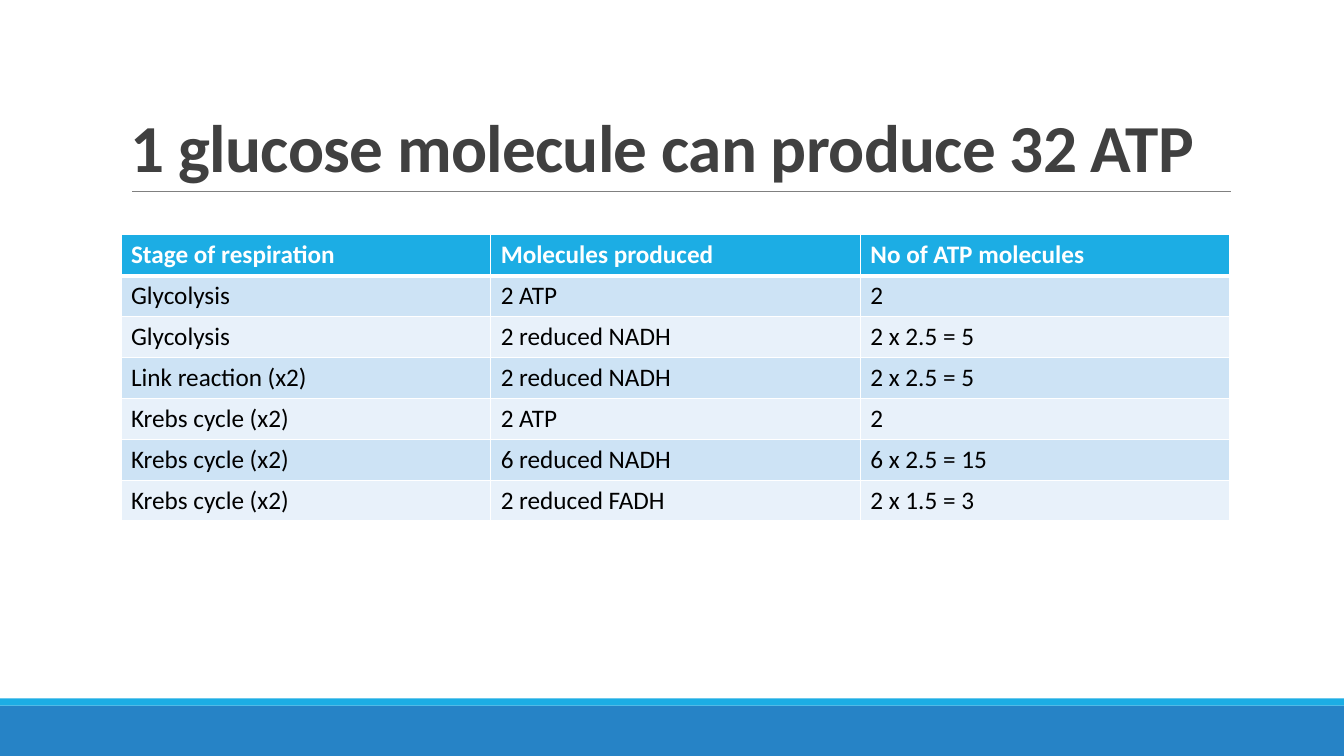
from lxml.etree import SubElement
from pptx import Presentation
from pptx.dml.color import RGBColor
from pptx.enum.shapes import MSO_CONNECTOR, MSO_SHAPE
from pptx.enum.text import MSO_ANCHOR
from pptx.oxml.ns import qn
from pptx.util import Inches, Pt

FONT = "Calibri"
WHITE = "FFFFFF"
CYAN = "1CADE4"
BLUE = "2683C6"
ROW_FILLS = ("CDE3F5", "E8F1FA")

ATP_YIELD = [
    ("Stage of respiration", "Molecules produced", "No of ATP molecules"),
    ("Glycolysis", "2 ATP", "2"),
    ("Glycolysis", "2 reduced NADH", "2 x 2.5 = 5"),
    ("Link reaction (x2)", "2 reduced NADH", "2 x 2.5 = 5"),
    ("Krebs cycle (x2)", "2 ATP", "2"),
    ("Krebs cycle (x2)", "6 reduced NADH", "6 x 2.5 = 15"),
    ("Krebs cycle (x2)", "2 reduced FADH", "2 x 1.5 = 3"),
]


def color(value):
    return RGBColor.from_string(value)


def style_text(paragraph, size, value, bold):
    for span in paragraph.runs:
        span.font.name = FONT
        span.font.size = Pt(size)
        span.font.bold = bold
        span.font.color.rgb = color(value)


def add_band(page, top, height, fill):
    band = page.shapes.add_shape(
        MSO_SHAPE.RECTANGLE, 0, Inches(top), Inches(13.33), Inches(height))
    band.shadow.inherit = False
    band.fill.solid()
    band.fill.fore_color.rgb = color(fill)
    band.line.fill.background()


def add_rule(page, left, right, top):
    rule = page.shapes.add_connector(
        MSO_CONNECTOR.STRAIGHT, Inches(left), Inches(top), Inches(right), Inches(top))
    rule.line.color.rgb = color("808080")
    rule.line.width = Pt(0.5)
    SubElement(rule._element.spPr, qn("a:effectLst"))


def add_title(page, text):
    box = page.shapes.add_textbox(Inches(1.2), Inches(0.31), Inches(11), Inches(1.59))
    frame = box.text_frame
    frame.word_wrap = True
    frame.vertical_anchor = MSO_ANCHOR.BOTTOM
    frame.text = text
    para = frame.paragraphs[0]
    para.line_spacing = 0.85
    style_text(para, 48, "404040", True)
    para.runs[0].font._element.set("spc", "-50")


def set_borders(cell, top, bottom):
    properties = cell._tc.get_or_add_tcPr()
    for side, width in (("L", 1), ("R", 1), ("T", top), ("B", bottom)):
        border = SubElement(properties, qn(f"a:ln{side}"), w=str(Pt(width)))
        fill = SubElement(border, qn("a:solidFill"))
        SubElement(fill, qn("a:srgbClr"), val=WHITE)


def add_yield_table(page, rows):
    table = page.shapes.add_table(
        len(rows), len(rows[0]),
        Inches(1.2), Inches(2.33), Inches(11), Inches(2.84)).table
    for row_index, row in enumerate(rows):
        header = row_index == 0
        fill = CYAN if header else ROW_FILLS[(row_index - 1) % 2]
        for column_index, text in enumerate(row):
            cell = table.cell(row_index, column_index)
            # Borders come before the fill in the cell properties
            set_borders(cell, 3 if row_index == 1 else 1, 3 if header else 1)
            cell.fill.solid()
            cell.fill.fore_color.rgb = color(fill)
            cell.text_frame.text = text
            style_text(cell.text_frame.paragraphs[0], 18,
                       WHITE if header else "000000", header)


def main():
    deck = Presentation()
    deck.slide_width = Inches(13.33)
    deck.slide_height = Inches(7.5)
    page = deck.slides.add_slide(deck.slide_layouts[6])

    # Footer bands
    add_band(page, 7, 0.5, BLUE)
    add_band(page, 6.93, 0.07, CYAN)

    # Title and rule
    add_rule(page, 1.31, 12.21, 1.9)
    add_title(page, "1 glucose molecule can produce 32 ATP")

    # ATP yield by stage
    add_yield_table(page, ATP_YIELD)

    deck.save("out.pptx")


if __name__ == "__main__":
    main()
